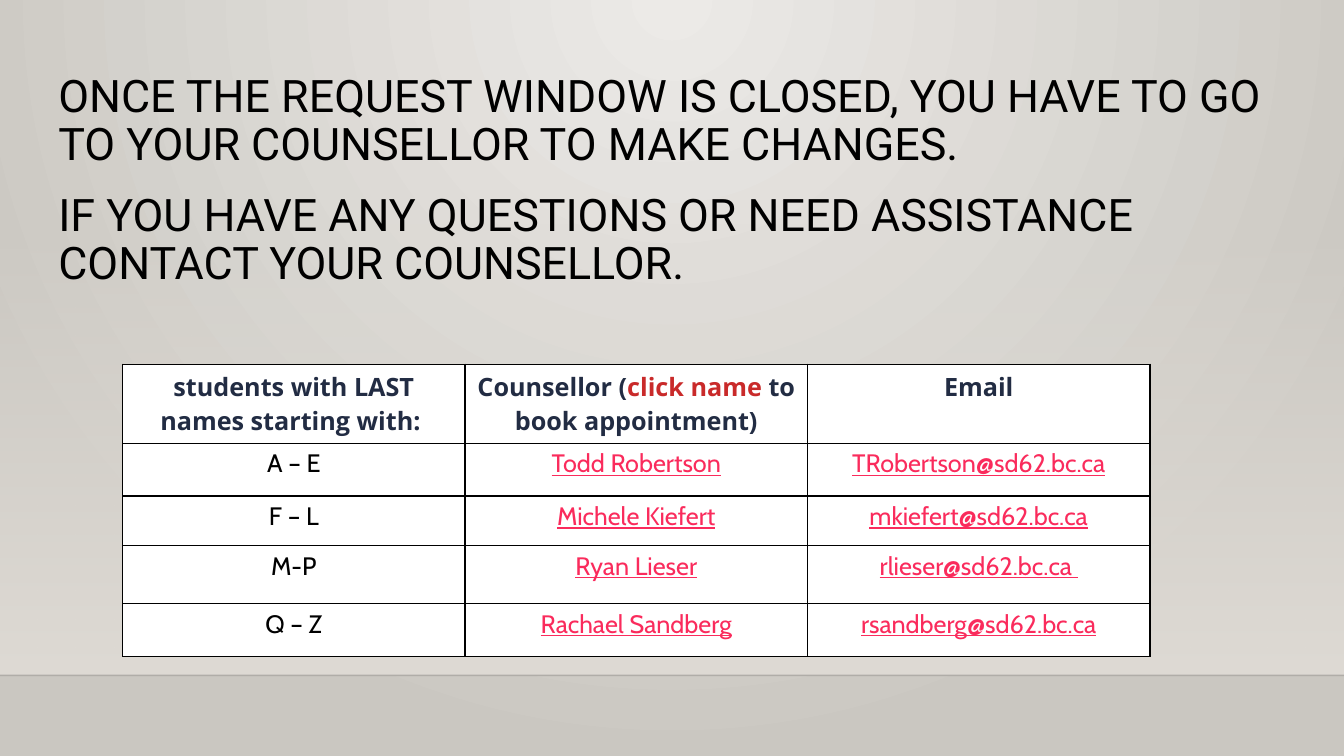
"""Build the slide that tells students which counsellor to contact."""
from lxml import etree
from pptx import Presentation
from pptx.dml.color import RGBColor
from pptx.enum.shapes import MSO_CONNECTOR, MSO_SHAPE
from pptx.enum.text import MSO_ANCHOR, MSO_AUTO_SIZE, PP_ALIGN
from pptx.oxml.ns import qn
from pptx.util import Cm, Pt

LEFT, MID = PP_ALIGN.LEFT, PP_ALIGN.CENTER
TOP = MSO_ANCHOR.TOP
NONE = MSO_AUTO_SIZE.NONE
RECT = MSO_SHAPE.RECTANGLE
LINE = MSO_CONNECTOR.STRAIGHT

BLACK = RGBColor(0x00, 0x00, 0x00)
WHITE = RGBColor(0xFF, 0xFF, 0xFF)
NAVY = RGBColor(0x22, 0x2C, 0x43)
RED = RGBColor(0xC9, 0x2A, 0x2A)
PINK = RGBColor(0xFA, 0x2B, 0x5C)
PALE = RGBColor(0xEC, 0xEA, 0xE7)
GREY = RGBColor(0xCA, 0xC7, 0xC1)
SAND = RGBColor(0xDF, 0xDB, 0xD5)


def write(para, text, size=18, face="Cabin", color=BLACK, bold=False,
          under=False, align=MID):
    para.alignment = align
    run = para.add_run()
    run.text = text
    font = run.font
    font.size, font.name, font.bold = Pt(size), face, bold
    font.underline = under
    font.color.rgb = color


def blend(fill, *colors):
    fill.gradient()
    for stop, color in zip(fill.gradient_stops, colors):
        stop.color.rgb = color


deck = Presentation()
deck.slide_width, deck.slide_height = Cm(33.87), Cm(19.05)
slide = deck.slides.add_slide(deck.slide_layouts[5])
shapes = slide.shapes

blend(slide.background.fill, PALE, GREY)
lin = slide._element.find(".//" + qn("a:lin"))
glow = etree.Element(qn("a:path"), {"path": "circle"})
etree.SubElement(glow, qn("a:fillToRect"),
                 l="43000", t="0", r="43000", b="100000")
lin.getparent().replace(lin, glow)

wall = shapes.add_shape(RECT, 0, Cm(5.61), deck.slide_width, Cm(11.41))
wall.shadow.inherit = False
wall.line.fill.background()
blend(wall.fill, SAND, SAND)
wall.fill.gradient_angle = 270
tint = wall._element.find(".//" + qn("a:srgbClr"))
etree.SubElement(tint, qn("a:alpha"), val="0")

floor = shapes.add_connector(LINE, 0, Cm(17.02), deck.slide_width, Cm(17.02))
floor.line.width = Pt(1)
floor.line.color.rgb = BLACK
tint = floor._element.find(".//" + qn("a:srgbClr"))
etree.SubElement(tint, qn("a:alpha"), val="20000")
etree.SubElement(floor._element.spPr, qn("a:effectLst"))

title = shapes.title
shapes._spTree.append(title._element)
title.left, title.top = Cm(1.14), Cm(1.52)
title.width, title.height = Cm(31.55), Cm(6.6)
frame = title.text_frame
frame.word_wrap, frame.auto_size = True, NONE
frame.vertical_anchor = TOP
frame.margin_left = frame.margin_right = Cm(0.33)
frame.margin_top = frame.margin_bottom = Cm(0.33)
first, second = frame.paragraphs[0], frame.add_paragraph()
write(first, "ONCE THE REQUEST WINDOW IS CLOSED, YOU HAVE TO GO TO YOUR "
      "COUNSELLOR TO MAKE CHANGES.", size=32, face="Roboto", align=LEFT)
write(second, "IF YOU HAVE ANY QUESTIONS OR NEED ASSISTANCE CONTACT YOUR "
      "COUNSELLOR.", size=32, face="Roboto", align=LEFT)
first.line_spacing = second.line_spacing = 0.9
first.space_before = Pt(0)
second.space_before = Pt(16)

HEADS = [
    [("students with LAST names starting with: ", NAVY)],
    [("Counsellor (", NAVY), ("click name", RED),
     (" to book appointment)", NAVY)],
    [("Email", NAVY)],
]
STAFF = [
    ("A – E", "Todd Robertson", "TRobertson@sd62.bc.ca"),
    ("F – L", "Michele Kiefert", "mkiefert@sd62.bc.ca"),
    ("M-P", "Ryan Lieser", "rlieser@sd62.bc.ca "),
    ("Q – Z", "Rachael Sandberg", "rsandberg@sd62.bc.ca"),
]
HEIGHTS = [1.99, 1.33, 1.25, 1.46, 1.33]

table = shapes.add_table(len(HEIGHTS), len(HEADS), Cm(3.09), Cm(9.18),
                         Cm(25.89), Cm(sum(HEIGHTS))).table
table.first_row = table.horz_banding = False
for col in table.columns:
    col.width = Cm(8.63)
for row, high in zip(table.rows, HEIGHTS):
    row.height = Cm(high)

for cell in table.iter_cells():
    props = cell._tc.get_or_add_tcPr()
    for side in ("a:lnL", "a:lnR", "a:lnT", "a:lnB"):
        edge = etree.SubElement(props, qn(side), w="12700")
        ink = etree.SubElement(edge, qn("a:solidFill"))
        etree.SubElement(ink, qn("a:srgbClr"), val=str(BLACK))
    cell.fill.solid()
    cell.fill.fore_color.rgb = WHITE
    cell.vertical_anchor = TOP

for x, parts in enumerate(HEADS):
    para = table.cell(0, x).text_frame.paragraphs[0]
    for text, color in parts:
        write(para, text, face="Open Sans", color=color, bold=True)
for y, person in enumerate(STAFF, 1):
    for x, text in enumerate(person):
        para = table.cell(y, x).text_frame.paragraphs[0]
        write(para, text, color=PINK if x else BLACK, under=x > 0)

deck.save("out.pptx")
